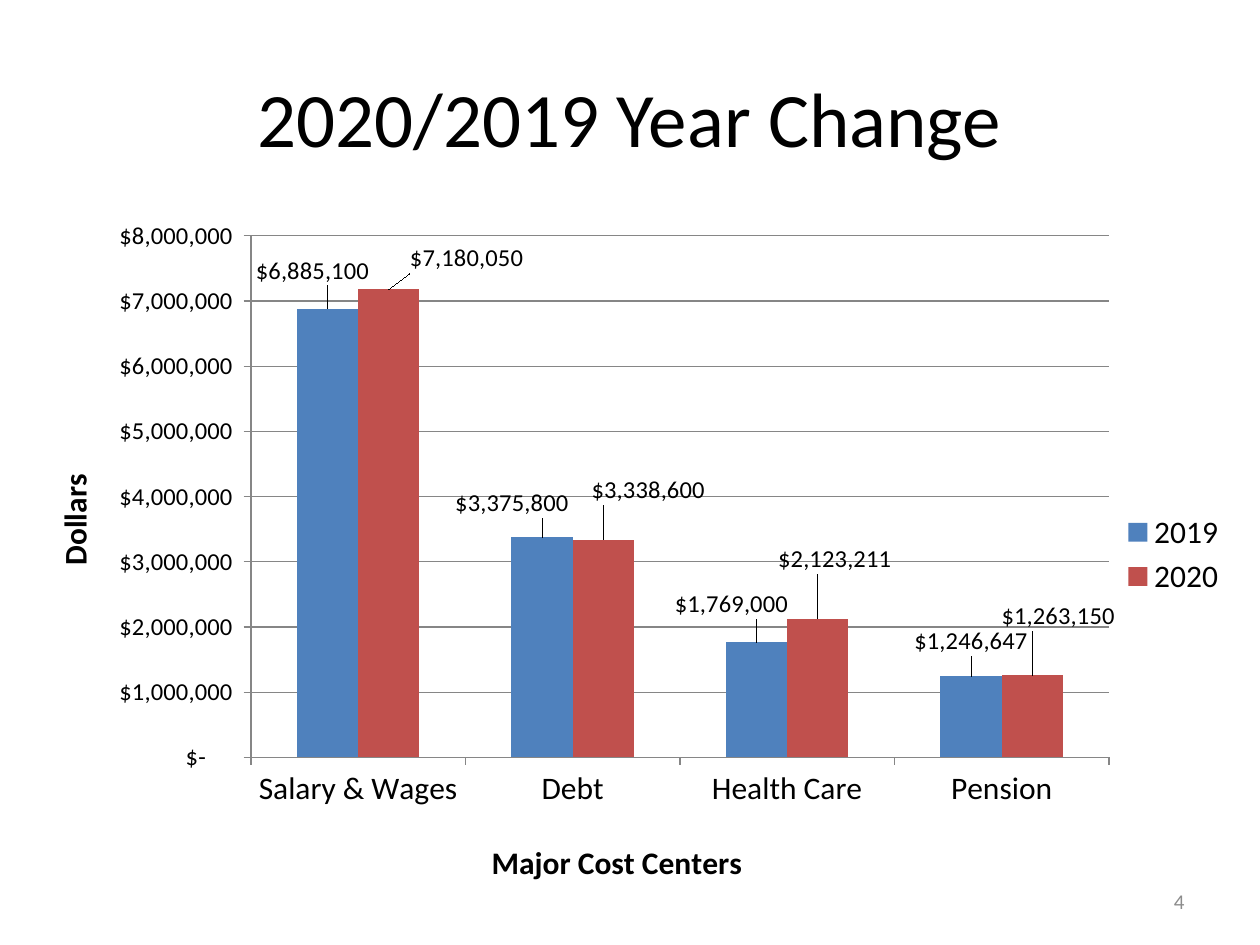
from lxml.etree import SubElement
from pptx import Presentation
from pptx.chart.data import CategoryChartData
from pptx.dml.color import RGBColor
from pptx.enum.chart import XL_CHART_TYPE as ChartType
from pptx.enum.chart import XL_LABEL_POSITION as LabelPosition
from pptx.enum.chart import XL_LEGEND_POSITION as LegendPosition
from pptx.enum.chart import XL_TICK_MARK as TickMark
from pptx.enum.text import MSO_ANCHOR as Anchor
from pptx.enum.text import PP_ALIGN as Align
from pptx.oxml.ns import qn
from pptx.util import Emu, Inches, Pt

BLACK = RGBColor(0x00, 0x00, 0x00)
GRAY = RGBColor(0x8C, 0x8C, 0x8C)
GRID = RGBColor(0x86, 0x86, 0x86)
BLUE = RGBColor(0x4F, 0x81, 0xBD)
RED = RGBColor(0xC0, 0x50, 0x4D)

DOLLARS = '"$"#,##0'
ACCOUNTING = r'_("$"* #,##0_);_("$"* \(#,##0\);_("$"* "-"??_);_(@_)'

CHART_BOX = (32, 220, 1207, 672)
PLOT_BOX = (251, 236, 858, 524)
CATEGORIES = ("Salary & Wages", "Debt", "Health Care", "Pension")
SERIES = (
    ("2019", BLUE, (6885100, 3375800, 1769000, 1246647),
     ((-15, -18), (-30, -14), (-25, -18), (0, -15))),
    ("2020", RED, (7180050, 3338600, 2123211, 1263150),
     ((78, -11), (45, -30), (17, -40), (26, -39))),
)


class SlideBuilder:
    """Holds the slide, its font and its pixel scale."""

    font = "Calibri"
    scale = Inches(1) / 126

    def __init__(self, slide):
        self.slide = slide

    def emu(self, *lengths):
        return [Emu(round(length * self.scale)) for length in lengths]

    def style(self, font, size, color=BLACK, bold=False):
        font.name, font.size, font.bold = self.font, Pt(size), bold
        font.color.rgb = color

    def add_run(self, frame, text, size, align, color=BLACK, bold=False):
        paragraph = frame.paragraphs[0]
        paragraph.alignment = align
        run = paragraph.add_run()
        run.text = text
        self.style(run.font, size, color, bold)

    def title(self, text, box):
        shape = self.slide.shapes.title
        shape.left, shape.top, shape.width, shape.height = self.emu(*box)
        shape.text_frame.vertical_anchor = Anchor.MIDDLE
        self.add_run(shape.text_frame, text, 44, Align.CENTER)

    def text(self, text, box, size, align, color):
        frame = self.slide.shapes.add_textbox(*self.emu(*box)).text_frame
        frame.word_wrap = True
        frame.vertical_anchor = Anchor.MIDDLE
        self.add_run(frame, text, size, align, color)

    def arrange(self, layout, edge=False, target=None, **lengths):
        manual = SubElement(layout, qn("c:manualLayout"))
        if target:
            SubElement(manual, qn("c:layoutTarget"), val=target)
        if edge:
            for mode in ("c:xMode", "c:yMode"):
                SubElement(manual, qn(mode), val="edge")
        left, top, width, height = CHART_BOX
        origins = {"x": left, "y": top} if edge else {}
        for name, length in lengths.items():
            total = width if name in "xw" else height
            share = (length - origins.get(name, 0)) / total
            SubElement(manual, qn(f"c:{name}"), val=f"{share:.4f}")

    def axis(self, axis, title, x, y, size, turned=False):
        axis.major_tick_mark = TickMark.OUTSIDE
        axis.minor_tick_mark = TickMark.NONE
        axis.format.line.color.rgb = GRID
        axis.format.line.width = Pt(0.75)
        self.style(axis.tick_labels.font, size)
        axis.has_title = True
        self.add_run(axis.axis_title.text_frame, title, 18, Align.CENTER, bold=True)
        element = axis.axis_title._element
        if turned:
            body = next(element.iter(qn("a:bodyPr")))
            body.set("rot", "-5400000")
            body.set("vert", "horz")
        layout = element.find(qn("c:layout"))
        self.arrange(layout, edge=True, x=x, y=y)

    def labels(self, series, offsets):
        labels = series.data_labels
        labels.show_value = True
        labels.position = LabelPosition.OUTSIDE_END
        labels.number_format = DOLLARS
        labels.number_format_is_linked = False
        self.style(labels.font, 14)
        for index, (dx, dy) in enumerate(offsets):
            label = series.points[index].data_label
            label.position = LabelPosition.OUTSIDE_END
            self.style(label.font, 14)
            element = labels._element.findall(qn("c:dLbl"))[index]
            layout = SubElement(element, qn("c:layout"))
            number = SubElement(element, qn("c:numFmt"), formatCode=DOLLARS, sourceLinked="0")
            element.find(qn("c:idx")).addnext(layout)
            layout.addnext(number)
            self.arrange(layout, x=dx, y=dy)

    def chart(self):
        data = CategoryChartData(number_format=DOLLARS)
        data.categories = CATEGORIES
        for name, _, values, _ in SERIES:
            data.add_series(name, values)
        chart = self.slide.shapes.add_chart(
            ChartType.COLUMN_CLUSTERED, *self.emu(*CHART_BOX), data).chart
        self.style(chart.font, 18)
        chart.has_title = False
        chart.has_legend = True
        chart.legend.position = LegendPosition.RIGHT
        chart.legend.include_in_layout = False
        self.style(chart.legend.font, 18)

        plot = chart.plots[0]
        plot.gap_width, plot.overlap, plot.vary_by_categories = 150, 0, False
        for series, (_, color, _, offsets) in zip(plot.series, SERIES):
            series.format.fill.solid()
            series.format.fill.fore_color.rgb = color
            self.labels(series, offsets)

        self.axis(chart.category_axis, "Major Cost Centers", 486, 838, 18)
        value_axis = chart.value_axis
        self.axis(value_axis, "Dollars", 47, 470, 14, turned=True)
        value_axis.minimum_scale, value_axis.maximum_scale = 0, 8000000
        value_axis.major_unit = 1000000
        value_axis.tick_labels.number_format = ACCOUNTING
        value_axis.tick_labels.number_format_is_linked = False
        value_axis.major_gridlines.format.line.color.rgb = GRID
        value_axis.major_gridlines.format.line.width = Pt(0.75)

        area = next(chart._chartSpace.iter(qn("c:plotArea")))
        layout = area.find(qn("c:layout"))
        if layout is None:
            layout = SubElement(area, qn("c:layout"))
            area.insert(0, layout)
        self.arrange(layout, edge=True, target="inner", **dict(zip("xywh", PLOT_BOX)))


def main():
    presentation = Presentation()
    presentation.slide_width, presentation.slide_height = Inches(10), Inches(7.5)
    builder = SlideBuilder(presentation.slides.add_slide(presentation.slide_layouts[5]))
    builder.title("2020/2019 Year Change", (63, 38, 1134, 157))
    builder.chart()
    builder.text("4", (903, 876, 294, 50), 12, Align.RIGHT, GRAY)
    presentation.save("out.pptx")


if __name__ == "__main__":
    main()
